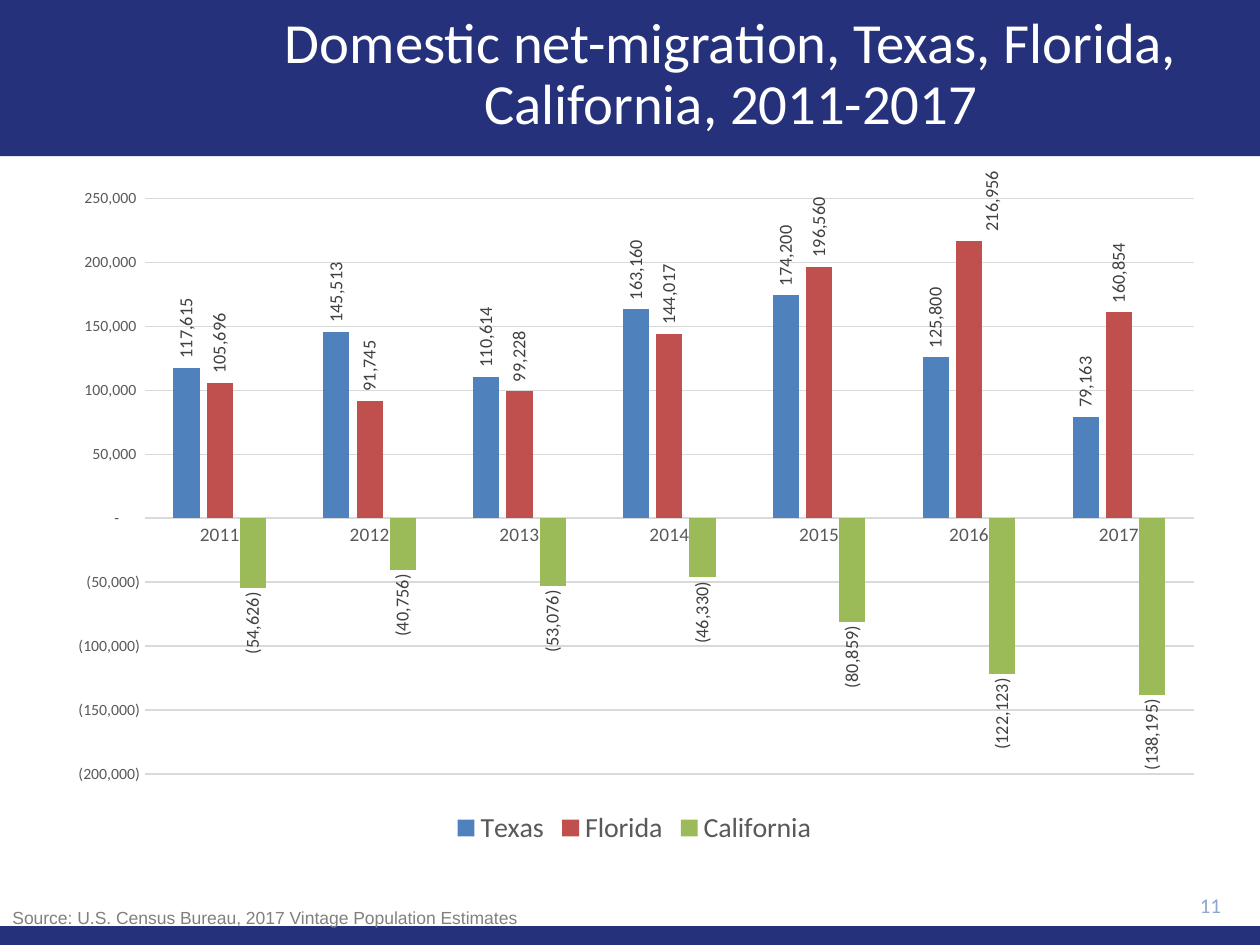
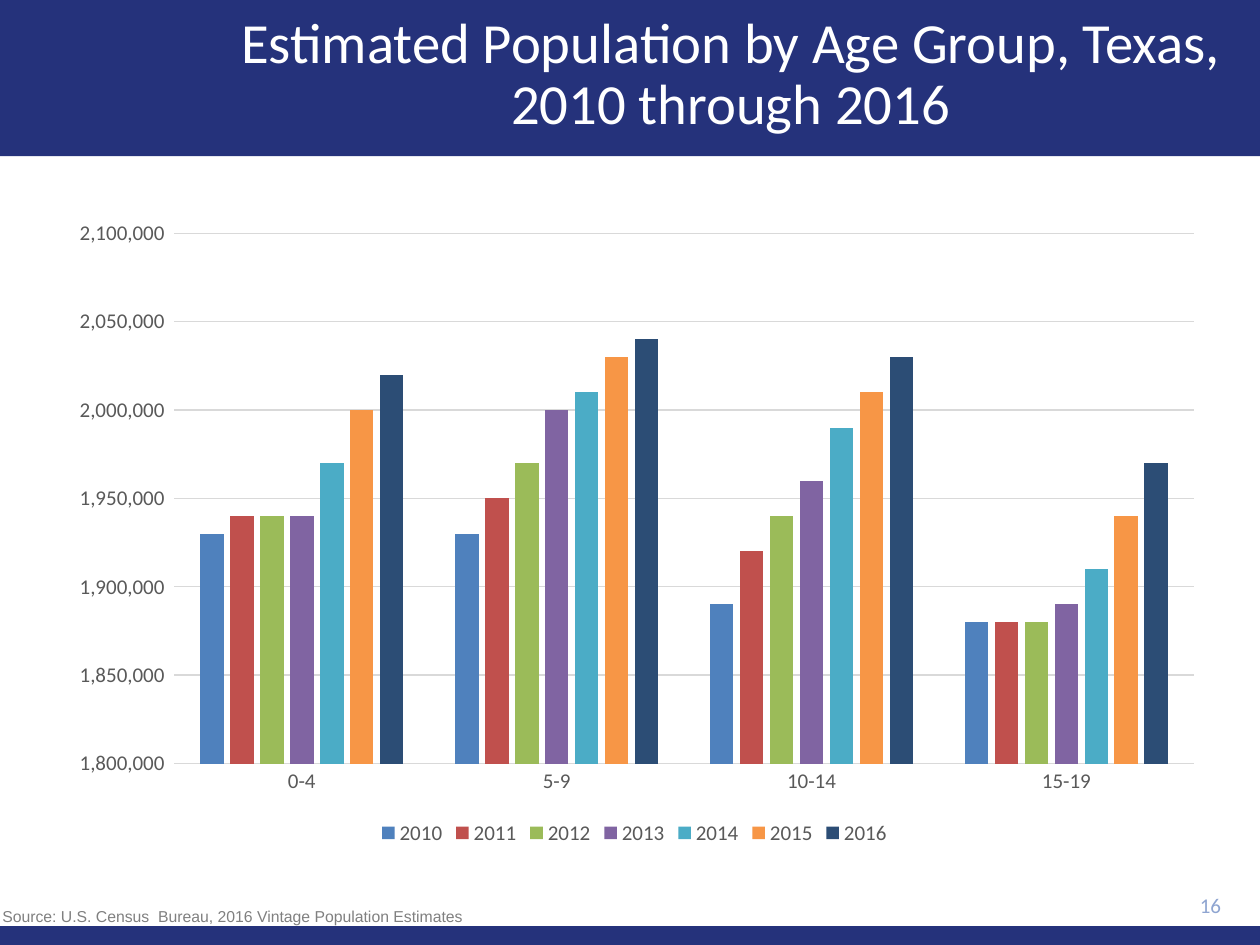
import copy

import pptx
import pptx.chart.data
import pptx.dml.color
import pptx.enum.chart
import pptx.enum.shapes
import pptx.enum.text
import pptx.oxml
import pptx.util
from pptx.util import Inches

COLORS = {
    "navy": "25327B", "white": "FFFFFF", "page": "8FA5D1", "source": "808080",
    "axis": "595959", "grid": "D9D9D9", "label": "404040",
}
SERIES_COLORS = ["4F81BD", "C0504D", "9BBB59", "8064A2", "4BACC6", "F79646", "2C4D75"]
ACCOUNTING = '_(* #,##0_);_(* \\(#,##0\\);_(* "-"??_);_(@_)'
CHART_NS = "http://schemas.openxmlformats.org/drawingml/2006/chart"
ALIGN = pptx.enum.text.PP_ALIGN
ANCHOR = pptx.enum.text.MSO_ANCHOR
NO_TICK = pptx.enum.chart.XL_TICK_MARK.NONE
rgb = pptx.dml.color.RGBColor.from_string

slides_content = [
    {
        "title": "Domestic net-migration, Texas, Florida, California, 2011-2017",
        "page": "11",
        "chart_top": 1.33, "chart_height": 5.42,
        "category_size": 11, "value_size": 9, "legend_size": 16,
        "scale": (-200000, 250000),
        "categories": ["2011", "2012", "2013", "2014", "2015", "2016", "2017"],
        "series": {
            "Texas": [117615, 145513, 110614, 163160, 174200, 125800, 79163],
            "Florida": [105696, 91745, 99228, 144017, 196560, 216956, 160854],
            "California": [-54626, -40756, -53076, -46330, -80859, -122123, -138195],
        },
        "labels": True,
        "source": "Source: U.S. Census Bureau, 2017 Vintage Population Estimates",
        "source_box": (0, 7.15, 4.35, 0.27),
        "source_format": {"size": 10, "wrap": False},
    },
    {
        "title": "Estimated Population by Age Group, Texas, 2010 through 2016",
        "page": "16",
        "chart_top": 1.65, "chart_height": 5.1,
        "category_size": 12, "value_size": 12, "legend_size": 12,
        "scale": (1800000, 2100000),
        "categories": ["0-4", "5-9", "10-14", "15-19"],
        "series": {
            "2010": [1930000, 1930000, 1890000, 1880000],
            "2011": [1940000, 1950000, 1920000, 1880000],
            "2012": [1940000, 1970000, 1940000, 1880000],
            "2013": [1940000, 2000000, 1960000, 1890000],
            "2014": [1970000, 2010000, 1990000, 1910000],
            "2015": [2000000, 2030000, 2010000, 1940000],
            "2016": [2020000, 2040000, 2030000, 1970000],
        },
        "labels": False,
        "source": "Source: U.S. Census\u00a0 Bureau, 2016 Vintage Population Estimates".replace("\u00a0", " "),
        "source_box": (-0.08, 7.14, 5, 0.26),
        "source_format": {"size": 9, "spacing": 1.07},
    },
]


def write(shape, text, size, color, font="Calibri", align=ALIGN.LEFT,
          anchor=ANCHOR.TOP, spacing=None, wrap=True):
    frame = shape.text_frame
    frame.auto_size = pptx.enum.text.MSO_AUTO_SIZE.NONE
    frame.word_wrap = wrap
    frame.vertical_anchor = anchor
    paragraph = frame.paragraphs[0]
    paragraph.alignment = align
    paragraph.line_spacing = spacing
    run = paragraph.add_run()
    run.text = text
    style_font(run.font, size, color, font)


def style_font(font, size, color, name="Calibri"):
    font.size = pptx.util.Pt(size)
    font.name = name
    font.color.rgb = rgb(COLORS[color])


deck = pptx.Presentation()
deck.slide_width, deck.slide_height = Inches(10), Inches(7.5)
title_only = deck.slide_layouts[5]

for index, content in enumerate(slides_content):
    slide = deck.slides.add_slide(title_only)

    # The bands are made once and moved to the shared layout.
    if index == 0:
        for top, height in [(0, 1.24), (7.35, 0.15)]:
            band = slide.shapes.add_shape(
                pptx.enum.shapes.MSO_SHAPE.RECTANGLE,
                Inches(0), Inches(top), Inches(10), Inches(height))
            band.shadow.inherit = False
            band.fill.solid()
            band.fill.fore_color.rgb = rgb(COLORS["navy"])
            band.line.fill.background()
            title_only.shapes._spTree.insert(2, band._element)

    title = slide.shapes.title
    title.left, title.top = Inches(1.7), Inches(0.1)
    title.width, title.height = Inches(8.2), Inches(1)
    write(title, content["title"], 32.4, "white", align=ALIGN.CENTER,
          anchor=ANCHOR.MIDDLE, spacing=0.9)

    # Chart
    data = pptx.chart.data.CategoryChartData(number_format=ACCOUNTING)
    data.categories = content["categories"]
    for name, values in content["series"].items():
        data.add_series(name, values)
    chart = slide.shapes.add_chart(
        pptx.enum.chart.XL_CHART_TYPE.COLUMN_CLUSTERED,
        Inches(0.41), Inches(content["chart_top"]),
        Inches(9.25), Inches(content["chart_height"]), data).chart
    chart.font.size = pptx.util.Pt(10)
    chart.font.name = "Calibri"
    chart.has_title = False
    chart.has_legend = True
    chart.legend.position = pptx.enum.chart.XL_LEGEND_POSITION.BOTTOM
    chart.legend.include_in_layout = False
    style_font(chart.legend.font, content["legend_size"], "axis")

    category_axis, value_axis = chart.category_axis, chart.value_axis
    for axis, size in [(category_axis, content["category_size"]),
                       (value_axis, content["value_size"])]:
        axis.major_tick_mark = axis.minor_tick_mark = NO_TICK
        style_font(axis.tick_labels.font, size, "axis")
    value_axis.minimum_scale, value_axis.maximum_scale = content["scale"]
    value_axis.major_unit = 50000
    value_axis.tick_labels.number_format = ACCOUNTING
    value_axis.tick_labels.number_format_is_linked = False
    value_axis.format.line.fill.background()
    for line in (category_axis.format.line, value_axis.major_gridlines.format.line):
        line.color.rgb = rgb(COLORS["grid"])
        line.width = pptx.util.Pt(0.75)

    plot = chart.plots[0]
    plot.gap_width, plot.overlap = 219, -27
    plot.vary_by_categories = False
    for series, color in zip(plot.series, SERIES_COLORS):
        series.format.fill.solid()
        series.format.fill.fore_color.rgb = rgb(color)
        series.invert_if_negative = False
        if not content["labels"]:
            continue
        labels = series.data_labels
        labels.show_value = True
        labels.position = pptx.enum.chart.XL_LABEL_POSITION.OUTSIDE_END
        style_font(labels.font, 10.5, "label")
        label_text = labels._element.find(f"{{{CHART_NS}}}txPr")
        label_text[0].set("rot", "-5400000")
        label_text[0].set("vert", "horz")

        # Florida's tallest column has its label moved to the right.
        if series.name == "Florida":
            peak = series.points[5].data_label
            peak.position = pptx.enum.chart.XL_LABEL_POSITION.OUTSIDE_END
            style_font(peak.font, 10.5, "label")
            peak_label = labels._element.find(f"{{{CHART_NS}}}dLbl")
            peak_text = peak_label.find(f"{{{CHART_NS}}}txPr")
            peak_label.replace(peak_text, copy.deepcopy(label_text))
            peak_label.insert(1, pptx.oxml.parse_xml(
                f'<c:layout xmlns:c="{CHART_NS}"><c:manualLayout>'
                '<c:x val="0.02"/><c:y val="0"/>'
                '</c:manualLayout></c:layout>'))

    # Footer
    page = slide.shapes.add_textbox(Inches(8.9), Inches(7.01), Inches(0.89), Inches(0.34))
    write(page, content["page"], 12, "page", align=ALIGN.RIGHT, anchor=ANCHOR.MIDDLE)
    source = slide.shapes.add_textbox(*map(Inches, content["source_box"]))
    write(source, content["source"], color="source", font="Arial", **content["source_format"])

deck.save("out.pptx")
